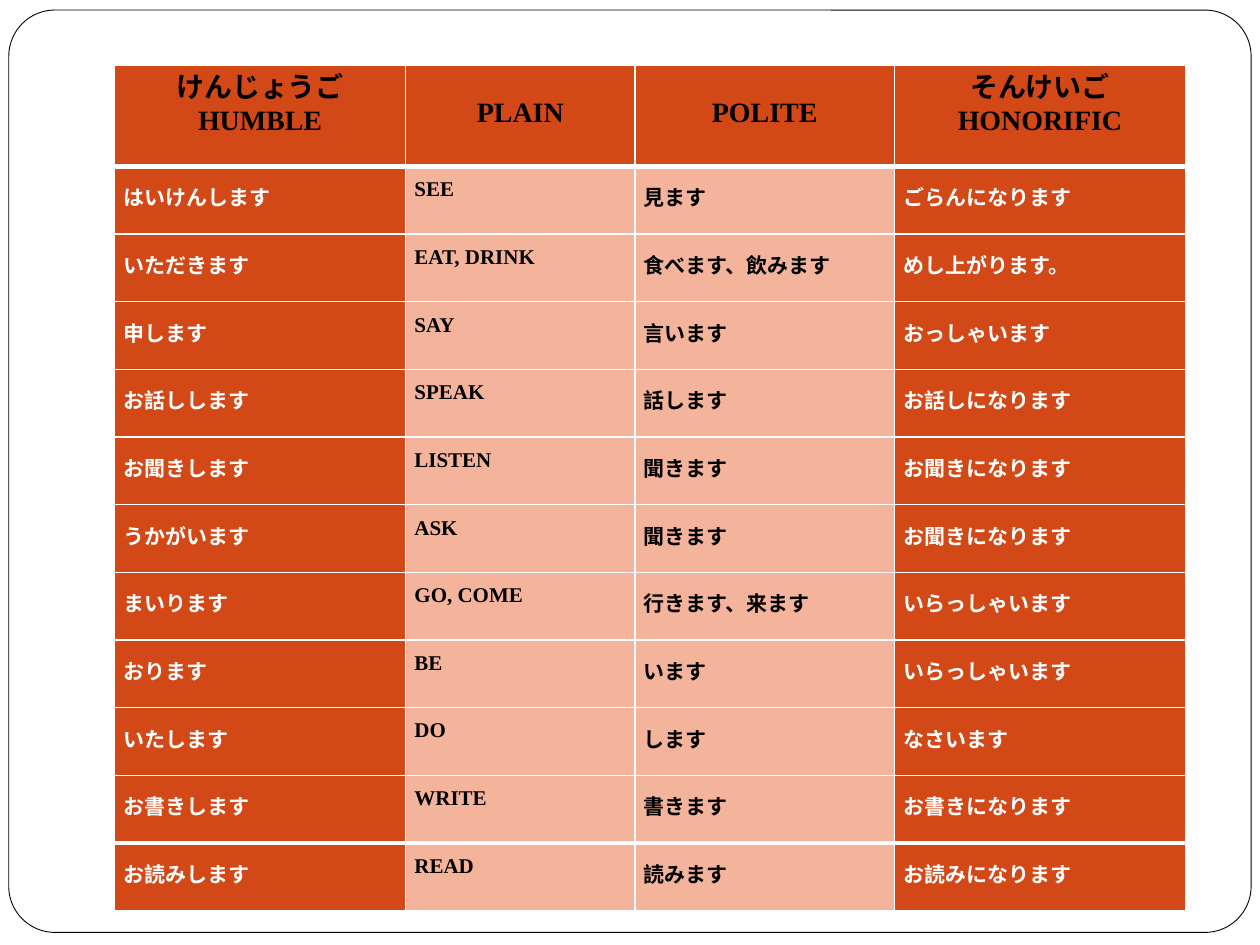
from dataclasses import dataclass
from lxml.etree import SubElement
from pptx import Presentation
from pptx.dml.color import RGBColor
from pptx.enum.shapes import MSO_SHAPE
from pptx.enum.text import PP_ALIGN
from pptx.oxml.ns import qn
from pptx.util import Inches, Pt


@dataclass(frozen=True)
class Theme:
    font: str = "Times New Roman"
    dark: str = "D34817"
    pale: str = "F4B39B"
    ink: str = "000000"
    paper: str = "FFFFFF"
    head: int = 16
    body: int = 12
    thin: int = 1
    thick: int = 3


def rgb(code):
    return RGBColor.from_string(code)


def edge(cell, side, width):
    line = SubElement(cell._tc.get_or_add_tcPr(), qn("a:" + side), w=str(Pt(width)))
    fill = SubElement(line, qn("a:solidFill"))
    SubElement(fill, qn("a:srgbClr"), val=theme.paper)


theme = Theme()
words = [
    ("けんじょうご\nHUMBLE", "PLAIN", "POLITE", "そんけいご\nHONORIFIC"),
    ("はいけんします", "SEE", "見ます", "ごらんになります"),
    ("いただきます", "EAT, DRINK", "食べます、飲みます", "めし上がります。"),
    ("申します", "SAY", "言います", "おっしゃいます"),
    ("お話しします", "SPEAK", "話します", "お話しになります"),
    ("お聞きします", "LISTEN", "聞きます", "お聞きになります"),
    ("うかがいます", "ASK", "聞きます", "お聞きになります"),
    ("まいります", "GO, COME", "行きます、来ます", "いらっしゃいます"),
    ("おります", "BE", "います", "いらっしゃいます"),
    ("いたします", "DO", "します", "なさいます"),
    ("お書きします", "WRITE", "書きます", "お書きになります"),
    ("お読みします", "READ", "読みます", "お読みになります"),
]

deck = Presentation()
deck.slide_width, deck.slide_height = Inches(10), Inches(7.5)
wide, high = deck.slide_width, deck.slide_height
slide = deck.slides.add_slide(deck.slide_layouts[6])

inset = Inches(0.07)
frame = slide.shapes.add_shape(
    MSO_SHAPE.ROUNDED_RECTANGLE, inset, Inches(0.08), wide - 2 * inset, Inches(7.32)
)
frame.adjustments[0] = 0.05
frame.shadow.inherit = False
frame.fill.solid()
frame.fill.fore_color.rgb = rgb(theme.paper)
frame.line.color.rgb = rgb(theme.ink)
frame.line.width = Pt(0.5)

spans = [Inches(size) for size in (2.31, 1.82, 2.06, 2.31)]
tall, top = Inches(6.71), Inches(0.8)
last = len(words) - 1
step = (tall - top) // last
grid = slide.shapes.add_table(
    len(words), len(spans), Inches(0.91), Inches(0.52), sum(spans), tall
).table
for col, span in zip(grid.columns, spans):
    col.width = span

for r, row in enumerate(words):
    grid.rows[r].height = step if r else top
    for c, text in enumerate(row):
        cell = grid.cell(r, c)
        outer = c in (0, 3)
        cell.margin_left = cell.margin_right = inset
        cell.margin_top = cell.margin_bottom = 0
        if r == 0 and not outer:
            cell.margin_top = Inches(0.25)
        edge(cell, "lnL", theme.thin)
        edge(cell, "lnR", theme.thin)
        edge(cell, "lnT", theme.thick if r in (1, last) else theme.thin)
        edge(cell, "lnB", theme.thick if r in (0, last - 1) else theme.thin)
        cell.fill.solid()
        cell.fill.fore_color.rgb = rgb(theme.dark if r == 0 or outer else theme.pale)
        cell.text_frame.text = text
        for para in cell.text_frame.paragraphs:
            para.font.name = theme.font
            para.font.bold = True
            para.font.size = Pt(theme.body if r else theme.head)
            para.font.color.rgb = rgb(theme.paper if r and outer else theme.ink)
            if r:
                para.line_spacing = 1.5
            else:
                para.alignment = PP_ALIGN.CENTER

deck.save("out.pptx")
